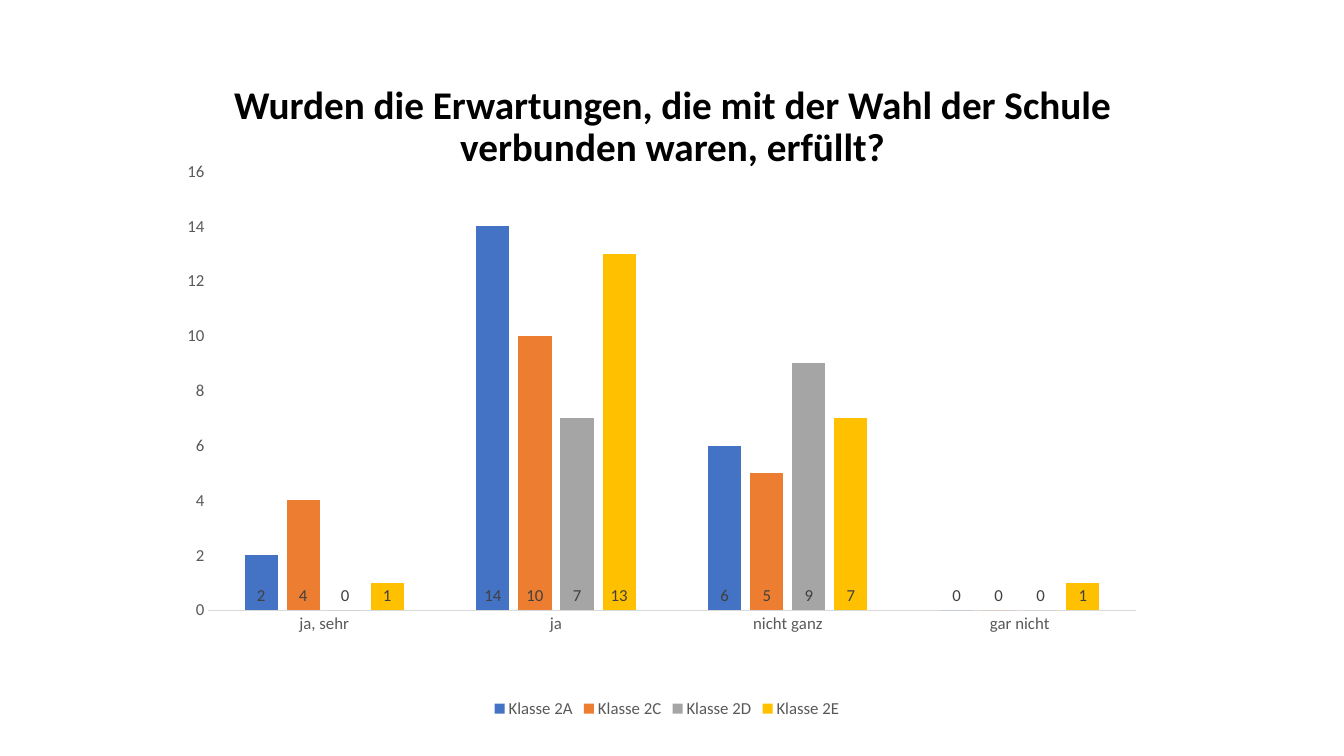
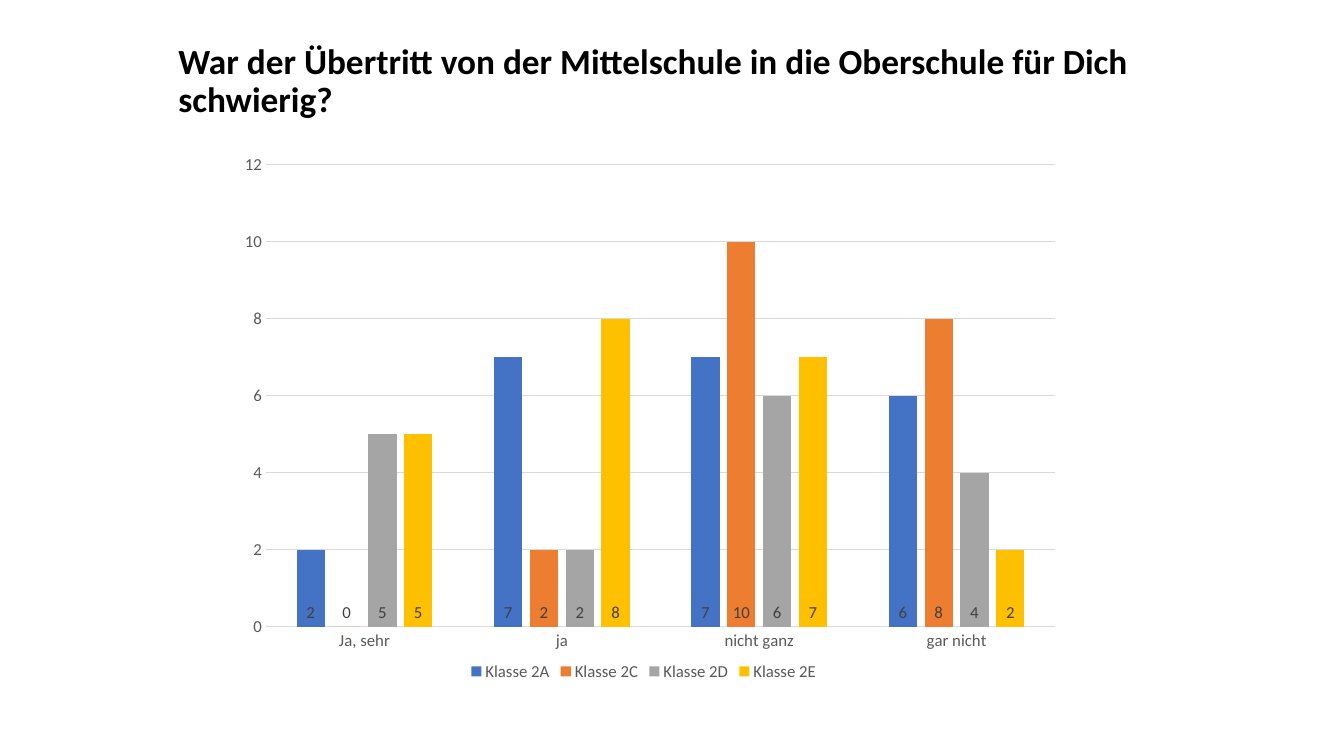
from lxml.etree import SubElement
from pptx import Presentation
from pptx.chart.data import CategoryChartData
from pptx.dml.color import RGBColor
from pptx.enum.chart import XL_CHART_TYPE, XL_LABEL_POSITION, XL_LEGEND_POSITION, XL_TICK_MARK
from pptx.enum.text import MSO_ANCHOR, PP_ALIGN
from pptx.oxml.ns import qn
from pptx.util import Inches, Pt

FONT = "Calibri"
COLORS = {"title": "000000", "axis": "595959", "label": "404040", "rule": "D9D9D9"}
CLASSES = {
    "Klasse 2A": "4472C4",
    "Klasse 2C": "ED7D31",
    "Klasse 2D": "A5A5A5",
    "Klasse 2E": "FFC000",
}

# Boxes are left, top, width, height in inches; plots are shares of the chart.
# Each row of votes belongs to one class.
QUESTIONS = [
    {
        "title": "Wurden die Erwartungen, die mit der Wahl der Schule verbunden waren, erfüllt?",
        "title_box": (1.67, 0.81, 10, 0.93),
        "size": 28,
        "align": PP_ALIGN.CENTER,
        "chart_box": (1.67, 1.59, 9.89, 5.58),
        "plot": (0.04, 0.02, 0.93, 0.78),
        "gridlines": False,
        "maximum": 16,
        "answers": ["ja, sehr", "ja", "nicht ganz", "gar nicht"],
        "votes": [(2, 14, 6, 0), (4, 10, 5, 0), (0, 7, 9, 0), (1, 13, 7, 1)],
    },
    {
        "title": "War der Übertritt von der Mittelschule in die Oberschule für Dich schwierig?",
        "title_box": (1.67, 0.6, 10.8, 0.64),
        "size": 25.2,
        "align": PP_ALIGN.LEFT,
        "chart_box": (2.22, 1.53, 8.33, 5.27),
        "plot": (0.05, 0.02, 0.94, 0.87),
        "gridlines": True,
        "maximum": 12,
        "answers": ["Ja, sehr", "ja", "nicht ganz", "gar nicht"],
        "votes": [(2, 7, 7, 6), (0, 2, 10, 8), (5, 2, 6, 4), (5, 8, 7, 2)],
    },
]


def style_font(font, size, color, bold=False):
    font.name, font.size, font.bold = FONT, Pt(size), bold
    font.color.rgb = RGBColor.from_string(color)


def style_rule(line):
    line.color.rgb = RGBColor.from_string(COLORS["rule"])
    line.width = Pt(0.75)


def add_title(page, question):
    box = page.shapes.add_textbox(*map(Inches, question["title_box"]))
    frame = box.text_frame
    frame.word_wrap = True
    frame.vertical_anchor = MSO_ANCHOR.BOTTOM
    frame.text = question["title"]
    para = frame.paragraphs[0]
    para.alignment = question["align"]
    para.line_spacing = 0.9
    style_font(para.runs[0].font, question["size"], COLORS["title"], bold=True)


def place_plot(chart, shares):
    """Fix the inner plot area, which python-pptx leaves automatic."""
    area = chart.element.find(".//" + qn("c:plotArea"))
    for old in area.findall(qn("c:layout")):
        area.remove(old)
    layout = SubElement(area, qn("c:layout"))
    area.insert(0, layout)
    manual = SubElement(layout, qn("c:manualLayout"))
    settings = [("layoutTarget", "inner"), ("xMode", "edge"), ("yMode", "edge")]
    settings += zip("xywh", shares)
    for tag, value in settings:
        SubElement(manual, qn(f"c:{tag}")).set("val", str(value))


def add_votes_chart(page, question):
    data = CategoryChartData()
    data.categories = question["answers"]
    for name, votes in zip(CLASSES, question["votes"]):
        data.add_series(name, votes)
    chart = page.shapes.add_chart(
        XL_CHART_TYPE.COLUMN_CLUSTERED, *map(Inches, question["chart_box"]), data
    ).chart
    chart.has_title = False
    style_font(chart.font, 10, COLORS["title"])
    place_plot(chart, question["plot"])

    # Columns and their labels
    plot = chart.plots[0]
    plot.gap_width, plot.overlap = 219, -27
    plot.vary_by_categories = False
    for series, color in zip(plot.series, CLASSES.values()):
        series.format.fill.solid()
        series.format.fill.fore_color.rgb = RGBColor.from_string(color)
        series.invert_if_negative = False
        labels = series.data_labels
        labels.show_value = True
        labels.position = XL_LABEL_POSITION.INSIDE_BASE
        style_font(labels.font, 12, COLORS["label"])

    # Axes
    for axis in (chart.category_axis, chart.value_axis):
        axis.major_tick_mark = axis.minor_tick_mark = XL_TICK_MARK.NONE
        style_font(axis.tick_labels.font, 12, COLORS["axis"])
    style_rule(chart.category_axis.format.line)
    scale = chart.value_axis
    scale.format.line.fill.background()
    scale.minimum_scale, scale.maximum_scale, scale.major_unit = 0, question["maximum"], 2
    scale.has_major_gridlines = question["gridlines"]
    if question["gridlines"]:
        style_rule(scale.major_gridlines.format.line)

    # Legend
    chart.has_legend = True
    chart.legend.position = XL_LEGEND_POSITION.BOTTOM
    chart.legend.include_in_layout = False
    style_font(chart.legend.font, 12, COLORS["axis"])


def main():
    deck = Presentation()
    deck.slide_width, deck.slide_height = Inches(13.33), Inches(7.5)
    for question in QUESTIONS:
        page = deck.slides.add_slide(deck.slide_layouts[6])
        add_title(page, question)
        add_votes_chart(page, question)
    deck.save("out.pptx")


if __name__ == "__main__":
    main()
